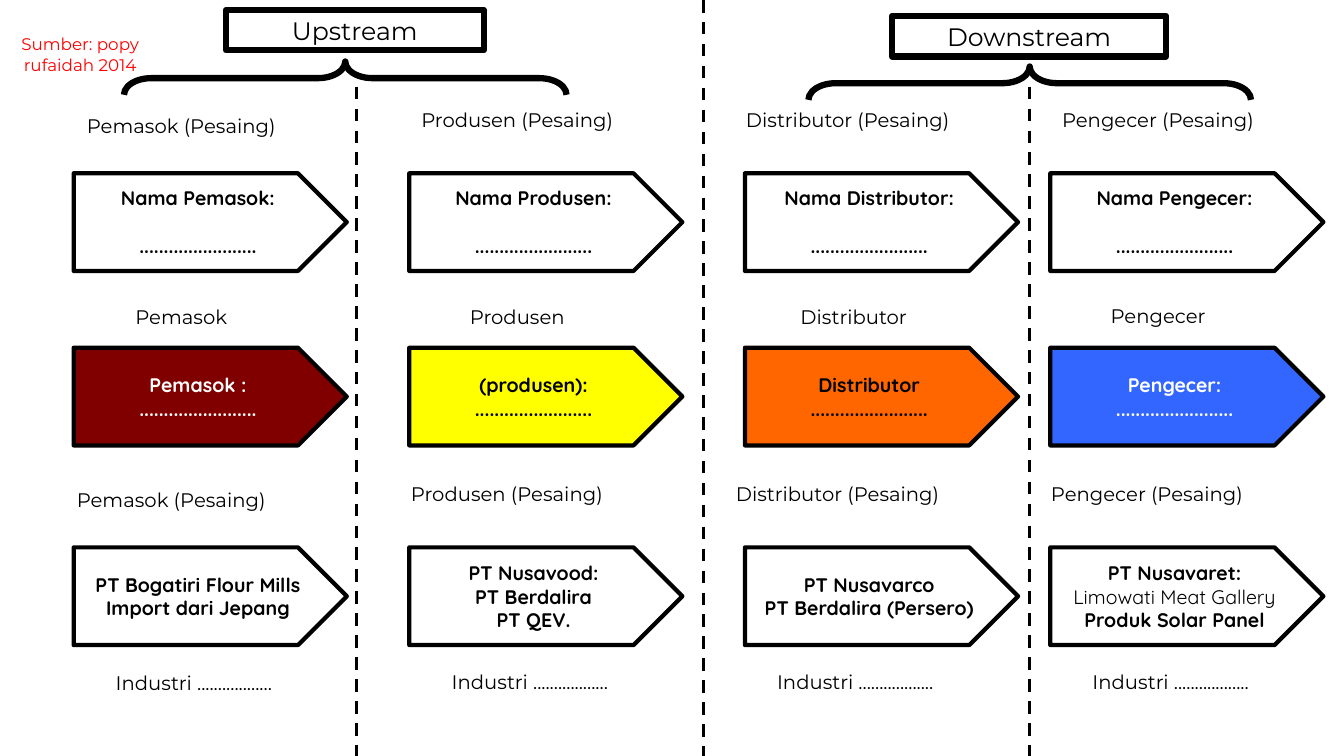
"""Build a value chain slide with upstream and downstream stages."""
from lxml import etree
from pptx import Presentation
from pptx import util as u
from pptx.dml.color import RGBColor
from pptx.enum import dml, shapes, text
from pptx.oxml.ns import qn

BLACK, WHITE, RED = "000000", "FFFFFF", "FF0000"
DOTS = "." * 24
INDUSTRY = "Industri .................."
SOURCE = "Sumber: popy rufaidah 2014"

STAGES = [
    {"name": "Pemasok", "fill": "800000", "ink": WHITE, "own": "Pemasok :",
     "rivals": ["PT Bogatiri Flour Mills", "Import dari Jepang"]},
    {"name": "Produsen", "fill": "FFFF00", "ink": BLACK, "own": "(produsen):",
     "rivals": ["PT Nusavood:", "PT Berdalira", "PT QEV."]},
    {"name": "Distributor", "fill": "FF6600", "ink": BLACK, "own": "Distributor",
     "rivals": ["PT Nusavarco", "PT Berdalira (Persero)"]},
    {"name": "Pengecer", "fill": "3366FF", "ink": WHITE, "own": "Pengecer:",
     "rivals": ["PT Nusavaret:", "Limowati Meat Gallery", "Produk Solar Panel"]},
]
LIGHT_LINES = {"Limowati Meat Gallery"}

ARROW_LEFTS = [52.6, 292.3, 532.1, 750.2]
ARROW_TOPS = [123.8, 248.4, 391]
ARROW_SIZE = (195.1, 69.8)
LABEL_ROWS = [
    ("{} (Pesaing)", [37.4, 277.4, 513.4, 735.1], [77.8, 73.4, 73.4, 73.4]),
    ("{}", [37.4, 277.4, 517.7, 735.1], [214.6, 214.6, 214.6, 213.8]),
    ("{} (Pesaing)", [30.2, 270, 506.2, 727.2], [344.9, 340.6, 340.6, 340.6]),
]
LABEL_SIZE = (184.3, 24.5)
INDUSTRY_LEFTS = [37.4, 277.4, 509.8, 735.1]
INDUSTRY_TOPS = [467.3, 466.6, 466.6, 466.6]
INDUSTRY_SIZE = (202.3, 31)
DIVIDERS = [(254.9, 61.9), (502.6, 0), (735.1, 61.9)]
HALVES = [
    ("Upstream", (161.3, 7.2, 184.3, 28.8), (234.7, -102.2)),
    ("Downstream", (637.2, 11.5, 195.8, 28.8), (723.6, -98.6)),
]
BRACE_SIZE = (23.8, 316.1)

deck = Presentation()
deck.slide_width, deck.slide_height = u.Pt(960), u.Pt(540)
slide = deck.slides.add_slide(deck.slide_layouts[6])


def color(target, code):
    target.rgb = RGBColor.from_string(code)


def write(shape, lines, size, font, ink=BLACK, bold=False, gap=0, spacing=None,
          anchor=text.MSO_ANCHOR.TOP):
    frame = shape.text_frame
    frame.word_wrap = True
    frame.vertical_anchor = anchor
    for index, line in enumerate(lines):
        paragraph = frame.add_paragraph() if index else frame.paragraphs[0]
        paragraph.alignment = text.PP_ALIGN.CENTER
        if index and gap:
            paragraph.space_before = u.Pt(gap)
        if spacing:
            paragraph.line_spacing = spacing
        run = paragraph.add_run()
        run.text = line
        run.font.size, run.font.name = u.Pt(size), font
        run.font.bold = bold and line not in LIGHT_LINES
        color(run.font.color, ink)


def outline(kind, box, weight, fill=None):
    shape = slide.shapes.add_shape(kind, *map(u.Pt, box))
    shape.shadow.inherit = False
    if fill:
        shape.fill.solid()
        color(shape.fill.fore_color, fill)
    else:
        shape.fill.background()
    color(shape.line.color, BLACK)
    shape.line.width = u.Pt(weight)
    return shape


def label(line, box, size=14, ink=BLACK, spacing=None):
    caption = slide.shapes.add_textbox(*map(u.Pt, box))
    write(caption, [line], size, "Montserrat", ink, spacing=spacing)


def arrow(lines, left, top, fill=None, ink=BLACK, gap=0):
    shape = outline(shapes.MSO_SHAPE.PENTAGON, (left, top, *ARROW_SIZE), 3, fill)
    write(shape, lines, 14, "Quicksand", ink, True, gap,
          anchor=text.MSO_ANCHOR.MIDDLE)


for x, top in DIVIDERS:
    divider = slide.shapes.add_connector(
        shapes.MSO_CONNECTOR.STRAIGHT, u.Pt(x), u.Pt(top), u.Pt(x), u.Pt(540))
    color(divider.line.color, BLACK)
    divider.line.width = u.Pt(2.25)
    divider.line.dash_style = dml.MSO_LINE.DASH
    etree.SubElement(divider._element.spPr, qn("a:effectLst"))

for column, stage in enumerate(STAGES):
    left = ARROW_LEFTS[column]
    names_top, own_top, rivals_top = ARROW_TOPS
    arrow([f"Nama {stage['name']}:", DOTS], left, names_top, gap=17.5)
    arrow([stage["own"], DOTS], left, own_top, stage["fill"], stage["ink"])
    arrow(stage["rivals"], left, rivals_top)
    for pattern, lefts, tops in LABEL_ROWS:
        label(pattern.format(stage["name"]),
              (lefts[column], tops[column], *LABEL_SIZE))
    label(INDUSTRY, (INDUSTRY_LEFTS[column], INDUSTRY_TOPS[column], *INDUSTRY_SIZE),
          spacing=1.5)

for title, title_box, brace_corner in HALVES:
    brace = outline(shapes.MSO_SHAPE.LEFT_BRACE, (*brace_corner, *BRACE_SIZE), 4.5)
    brace.rotation = 90
    brace.adjustments[0], brace.adjustments[1] = 0.82, 0.5
    heading = outline(shapes.MSO_SHAPE.RECTANGLE, title_box, 4.5)
    write(heading, [title], 18, "Montserrat")

label(SOURCE, (-1.4, 20.9, 117.4, 36), 12, RED)

deck.save("out.pptx")
